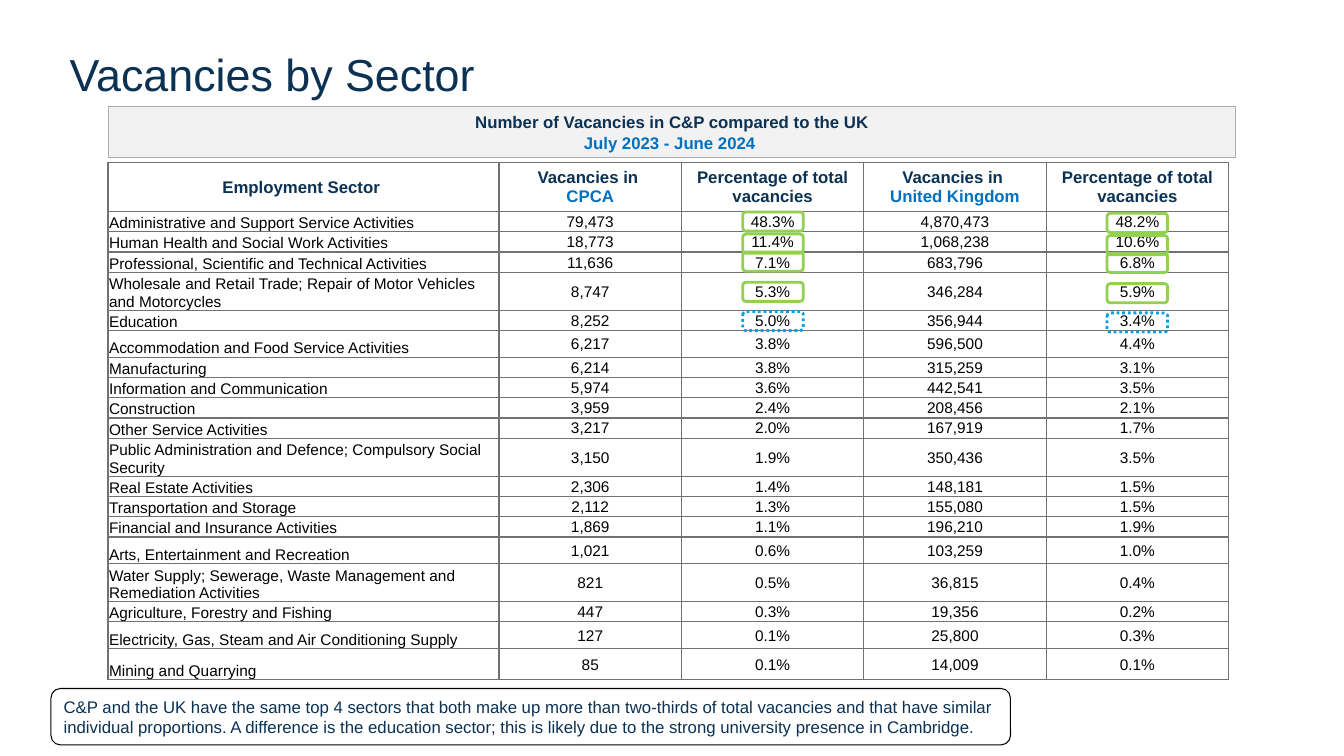
"""Build the slide that compares vacancies by sector."""
from dataclasses import dataclass

from pptx import Presentation
from pptx.dml.color import RGBColor
from pptx.enum.dml import MSO_LINE
from pptx.enum.shapes import MSO_SHAPE
from pptx.enum.text import MSO_ANCHOR, MSO_AUTO_SIZE, PP_ALIGN
from pptx.oxml import parse_xml
from pptx.oxml.ns import nsdecls
from pptx.shapes.autoshape import Shape
from pptx.slide import Slide
from pptx.table import _Cell
from pptx.text.text import TextFrame
from pptx.util import Pt

HUES = {
    "navy": "0B3153", "blue": "0070C0", "black": "000000", "pale": "F2F2F2",
    "edge": "AFABAB", "grid": "767171", "green": "92D050", "sky": "00A0E2",
}
SINGLE, DOUBLE = 14.5, 27.1
WIDTHS = [279.3] + [130.3] * 4


@dataclass
class Line:
    text: str
    size: float = 12
    hue: str = "navy"
    bold: bool = False
    align: PP_ALIGN = PP_ALIGN.CENTER


@dataclass
class Box:
    left: float
    top: float
    width: float
    height: float
    hue: str
    weight: float = 0.75
    kind: MSO_SHAPE = MSO_SHAPE.ROUNDED_RECTANGLE
    fill: str = ""
    dotted: bool = False


@dataclass
class Sector:
    name: str
    local: str
    share: str
    nation: str
    portion: str
    height: float = SINGLE


@dataclass
class Mark:
    top: float
    hue: str = "green"
    dotted: bool = False


HEADS = [
    [Line("Employment Sector ", bold=True)],
    [Line("Vacancies in ", bold=True), Line("CPCA", hue="blue", bold=True)],
    [Line("Percentage of total vacancies", bold=True)],
    [Line("Vacancies in ", bold=True), Line("United Kingdom", hue="blue", bold=True)],
    [Line("Percentage of total vacancies", bold=True)],
]
SECTORS = [
    Sector("Administrative and Support Service Activities", "79,473", "48.3%", "4,870,473", "48.2%"),
    Sector("Human Health and Social Work Activities", "18,773", "11.4%", "1,068,238", "10.6%"),
    Sector("Professional, Scientific and Technical Activities", "11,636", "7.1%", "683,796", "6.8%"),
    Sector("Wholesale and Retail Trade; Repair of Motor Vehicles and Motorcycles",
           "8,747", "5.3%", "346,284", "5.9%", DOUBLE),
    Sector("Education", "8,252", "5.0%", "356,944", "3.4%"),
    Sector("Accommodation and Food Service Activities", "6,217", "3.8%", "596,500", "4.4%", 19),
    Sector("Manufacturing", "6,214", "3.8%", "315,259", "3.1%"),
    Sector("Information and Communication", "5,974", "3.6%", "442,541", "3.5%"),
    Sector("Construction", "3,959", "2.4%", "208,456", "2.1%"),
    Sector("Other Service Activities", "3,217", "2.0%", "167,919", "1.7%"),
    Sector("Public Administration and Defence; Compulsory Social Security",
           "3,150", "1.9%", "350,436", "3.5%", DOUBLE),
    Sector("Real Estate Activities", "2,306", "1.4%", "148,181", "1.5%"),
    Sector("Transportation and Storage", "2,112", "1.3%", "155,080", "1.5%"),
    Sector("Financial and Insurance Activities", "1,869", "1.1%", "196,210", "1.9%"),
    Sector("Arts, Entertainment and Recreation", "1,021", "0.6%", "103,259", "1.0%", 19),
    Sector("Water Supply; Sewerage, Waste Management and Remediation Activities",
           "821", "0.5%", "36,815", "0.4%", DOUBLE),
    Sector("Agriculture, Forestry and Fishing", "447", "0.3%", "19,356", "0.2%"),
    Sector("Electricity, Gas, Steam and Air Conditioning Supply",
           "127", "0.1%", "25,800", "0.3%", 19.3),
    Sector("Mining and Quarrying", "85", "0.1%", "14,009", "0.1%", 22),
]
MARKS = [Mark(151.4), Mark(167.2), Mark(180), Mark(201.6), Mark(222.5, "sky", True)]
NOTE = (
    "C&P and the UK have the same top 4 sectors that both make up more than two-thirds "
    "of total vacancies and that have similar individual proportions. A difference is the "
    "education sector; this is likely due to the strong university presence in Cambridge."
)


def tint(name: str) -> RGBColor:
    """Return the named colour."""
    return RGBColor.from_string(HUES[name])


def write(frame: TextFrame, lines: list[Line]) -> None:
    """Fill a text frame with one paragraph per line."""
    frame.word_wrap = True
    for spot, line in enumerate(lines):
        para = frame.add_paragraph() if spot else frame.paragraphs[0]
        para.text = line.text
        para.alignment = line.align
        font = para.font
        font.name, font.size, font.bold = "Arial", Pt(line.size), line.bold
        font.color.rgb = tint(line.hue)


def draw(slide: Slide, box: Box) -> Shape:
    """Draw one outlined box."""
    shape = slide.shapes.add_shape(
        box.kind, Pt(box.left), Pt(box.top), Pt(box.width), Pt(box.height))
    shape.shadow.inherit = False
    if box.fill:
        shape.fill.solid()
        shape.fill.fore_color.rgb = tint(box.fill)
    else:
        shape.fill.background()
    shape.line.color.rgb = tint(box.hue)
    shape.line.width = Pt(box.weight)
    if box.dotted:
        shape.line.dash_style = MSO_LINE.ROUND_DOT
    return shape


def style(cell: _Cell, lines: list[Line], anchor: MSO_ANCHOR) -> None:
    """Write a cell and set its margins, borders and fill."""
    cell.margin_left = cell.margin_right = cell.margin_top = Pt(0.7)
    cell.margin_bottom = Pt(0)
    cell.vertical_anchor = anchor
    write(cell.text_frame, lines)
    props = cell._tc.get_or_add_tcPr()
    for side in ("lnL", "lnR", "lnT", "lnB"):
        props.append(parse_xml(
            f'<a:{side} {nsdecls("a")} w="{Pt(1)}"><a:solidFill>'
            f'<a:srgbClr val="{HUES["grid"]}"/></a:solidFill></a:{side}>'))
    cell.fill.background()


def chart(slide: Slide) -> None:
    """Lay out the table of sectors."""
    heights = [35] + [sector.height for sector in SECTORS]
    table = slide.shapes.add_table(
        len(heights), len(WIDTHS), Pt(77.2), Pt(116.1),
        Pt(sum(WIDTHS)), Pt(sum(heights))).table
    table.first_row = table.horz_banding = False
    for column, width in zip(table.columns, WIDTHS):
        column.width = Pt(width)
    for row, height in zip(table.rows, heights):
        row.height = Pt(height)
    for col, lines in enumerate(HEADS):
        style(table.cell(0, col), lines, MSO_ANCHOR.MIDDLE)
    for row, item in enumerate(SECTORS, 1):
        name = Line(item.name, 11, "black", align=PP_ALIGN.LEFT)
        style(table.cell(row, 0), [name], MSO_ANCHOR.BOTTOM)
        values = (item.local, item.share, item.nation, item.portion)
        for col, value in enumerate(values, 1):
            style(table.cell(row, col), [Line(value, 11, "black")], MSO_ANCHOR.MIDDLE)


def main() -> None:
    """Build and save the slide."""
    deck = Presentation()
    deck.slide_width, deck.slide_height = Pt(960), Pt(540)
    slide = deck.slides.add_slide(deck.slide_layouts[5])

    title = slide.shapes.title
    title.left, title.top, title.width, title.height = Pt(49.7), Pt(37.4), Pt(832.3), Pt(48.2)
    frame = title.text_frame
    frame.margin_left = frame.margin_right = frame.margin_top = frame.margin_bottom = Pt(0)
    frame.vertical_anchor = MSO_ANCHOR.TOP
    frame.auto_size = MSO_AUTO_SIZE.NONE
    write(frame, [Line("Vacancies by Sector", 32, align=PP_ALIGN.LEFT)])
    frame.paragraphs[0].line_spacing = 0.9

    banner = draw(slide, Box(77.2, 76.3, 805.7, 36.3, "edge",
                             kind=MSO_SHAPE.RECTANGLE, fill="pale"))
    write(banner.text_frame, [
        Line("Number of Vacancies in C&P compared to the UK", bold=True),
        Line("July 2023 - June 2024 ", hue="blue", bold=True)])
    chart(slide)
    note = draw(slide, Box(36.4, 491.8, 685.4, 40.3, "black"))
    write(note.text_frame, [Line(NOTE, align=PP_ALIGN.LEFT)])

    for left, drop in ((530.6, 0), (790.8, 1)):
        for mark in MARKS:
            draw(slide, Box(left, mark.top + drop, 43.2, 13.7, mark.hue, 2,
                            dotted=mark.dotted))
    deck.save("out.pptx")


if __name__ == "__main__":
    main()
